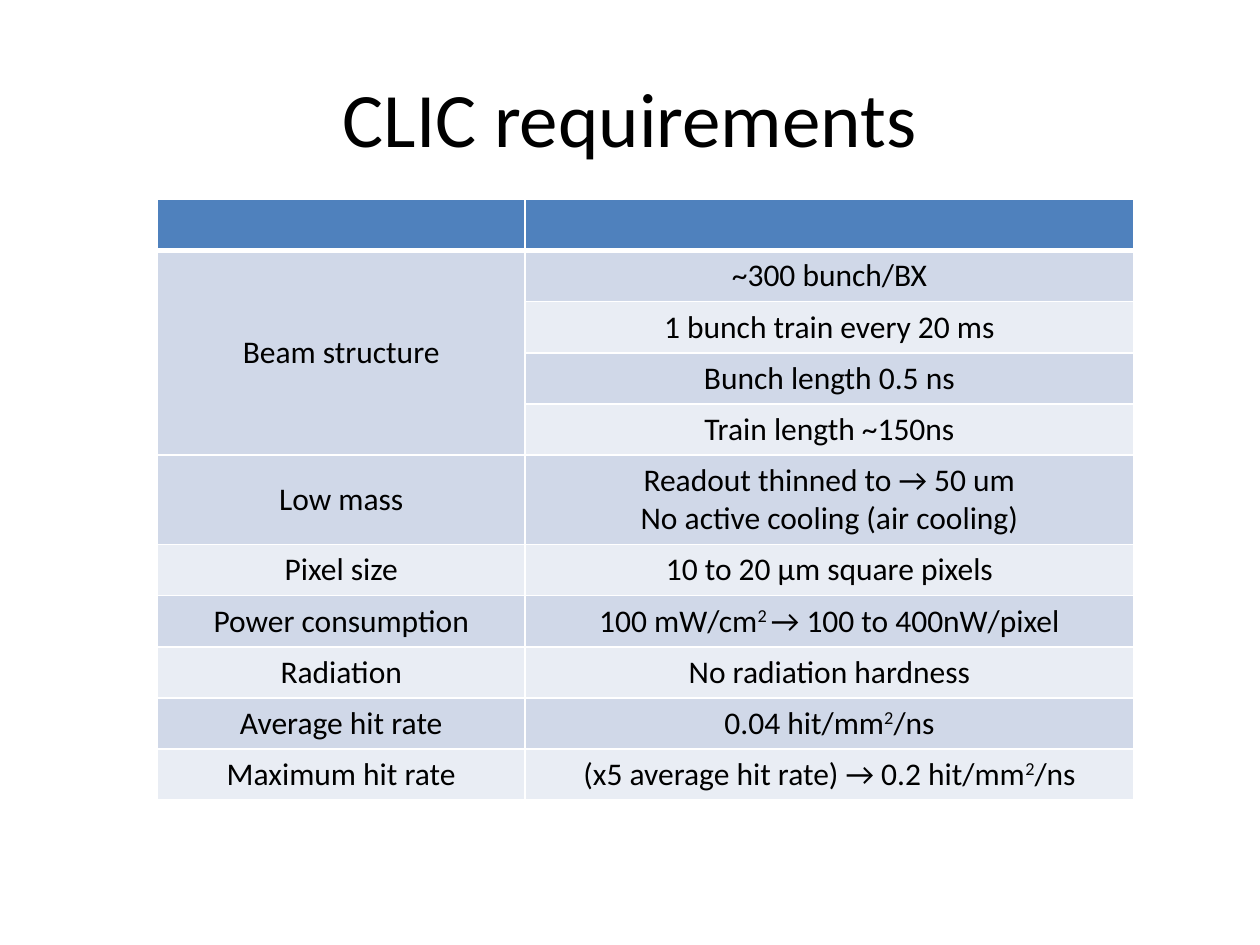
from lxml.etree import SubElement
from pptx import Presentation
from pptx.dml.color import RGBColor as RGB
from pptx.enum.text import MSO_ANCHOR as Anchor, PP_ALIGN as Align
from pptx.oxml.ns import qn
from pptx.util import Pt

BLACK = RGB(0x00, 0x00, 0x00)
WHITE = RGB(0xFF, 0xFF, 0xFF)
BLUE = RGB(0x4F, 0x81, 0xBD)
DARK = RGB(0xD0, 0xD8, 0xE8)
LIGHT = RGB(0xE9, 0xED, 0xF4)

ROWS = [
    ("", ""),
    ("Beam structure", "~300 bunch/BX"),
    ("", "1 bunch train every 20 ms"),
    ("", "Bunch length 0.5 ns"),
    ("", "Train length ~150ns"),
    ("Low mass", "Readout thinned to → 50 um\nNo active cooling (air cooling)"),
    ("Pixel size", "10 to 20 µm square pixels"),
    ("Power consumption", "100 mW/cm^2 ^→ 100 to 400nW/pixel"),
    ("Radiation", "No radiation hardness"),
    ("Average hit rate", "0.04 hit/mm^2^/ns"),
    ("Maximum hit rate", "(x5 average hit rate) → 0.2 hit/mm^2^/ns"),
]


class Deck:
    """Draws styled elements on one slide; text between carets is raised."""

    font = "Calibri"

    def __init__(self, width, height):
        self.prs = Presentation()
        self.prs.slide_width, self.prs.slide_height = Pt(width), Pt(height)
        self.slide = self.prs.slides.add_slide(self.prs.slide_layouts[6])

    def label(self, frame, text, size):
        for i, line in enumerate(text.split("\n")):
            para = frame.add_paragraph() if i else frame.paragraphs[0]
            para.alignment = Align.CENTER
            para.font.name, para.font.size = self.font, Pt(size)
            para.font.color.rgb = BLACK
            for j, part in enumerate(line.split("^")):
                if part:
                    run = para.add_run()
                    run.text = part
                    if j % 2:
                        run.font._element.set("baseline", "30000")

    def title(self, text, x, y, w, h):
        box = self.slide.shapes.add_textbox(Pt(x), Pt(y), Pt(w), Pt(h))
        frame = box.text_frame
        frame.word_wrap = True
        frame.vertical_anchor = Anchor.MIDDLE
        self.label(frame, text, 44)

    def edge(self, cell, base):
        props = cell._tc.get_or_add_tcPr()
        for side in "LRTB":
            width = Pt(base if side == "B" else 1)
            line = SubElement(props, qn(f"a:ln{side}"), w=str(width))
            fill = SubElement(line, qn("a:solidFill"))
            SubElement(fill, qn("a:srgbClr"), val=str(WHITE))

    def table(self, rows, x, y, widths, step, pitch):
        high = [step + pitch * right.count("\n") for _, right in rows]
        shape = self.slide.shapes.add_table(
            len(rows), len(widths), Pt(x), Pt(y), Pt(sum(widths)), Pt(sum(high)))
        grid = shape.table
        for col, width in zip(grid.columns, widths):
            col.width = Pt(width)
        for r, texts in enumerate(rows):
            grid.rows[r].height = Pt(high[r])
            for c, text in enumerate(texts):
                cell = grid.cell(r, c)
                cell.vertical_anchor = Anchor.MIDDLE
                self.label(cell.text_frame, text, 18)
                self.edge(cell, 1 if r else 3)
                cell.fill.solid()
                cell.fill.fore_color.rgb = (DARK if r % 2 else LIGHT) if r else BLUE
        return grid


def main():
    deck = Deck(720, 540)
    deck.title("CLIC requirements", 36, 21.6, 648, 90)
    grid = deck.table(ROWS, 90, 114, (210, 348), 29.2, 22)
    grid.cell(1, 0).merge(grid.cell(4, 0))
    deck.prs.save("out.pptx")


if __name__ == "__main__":
    main()
